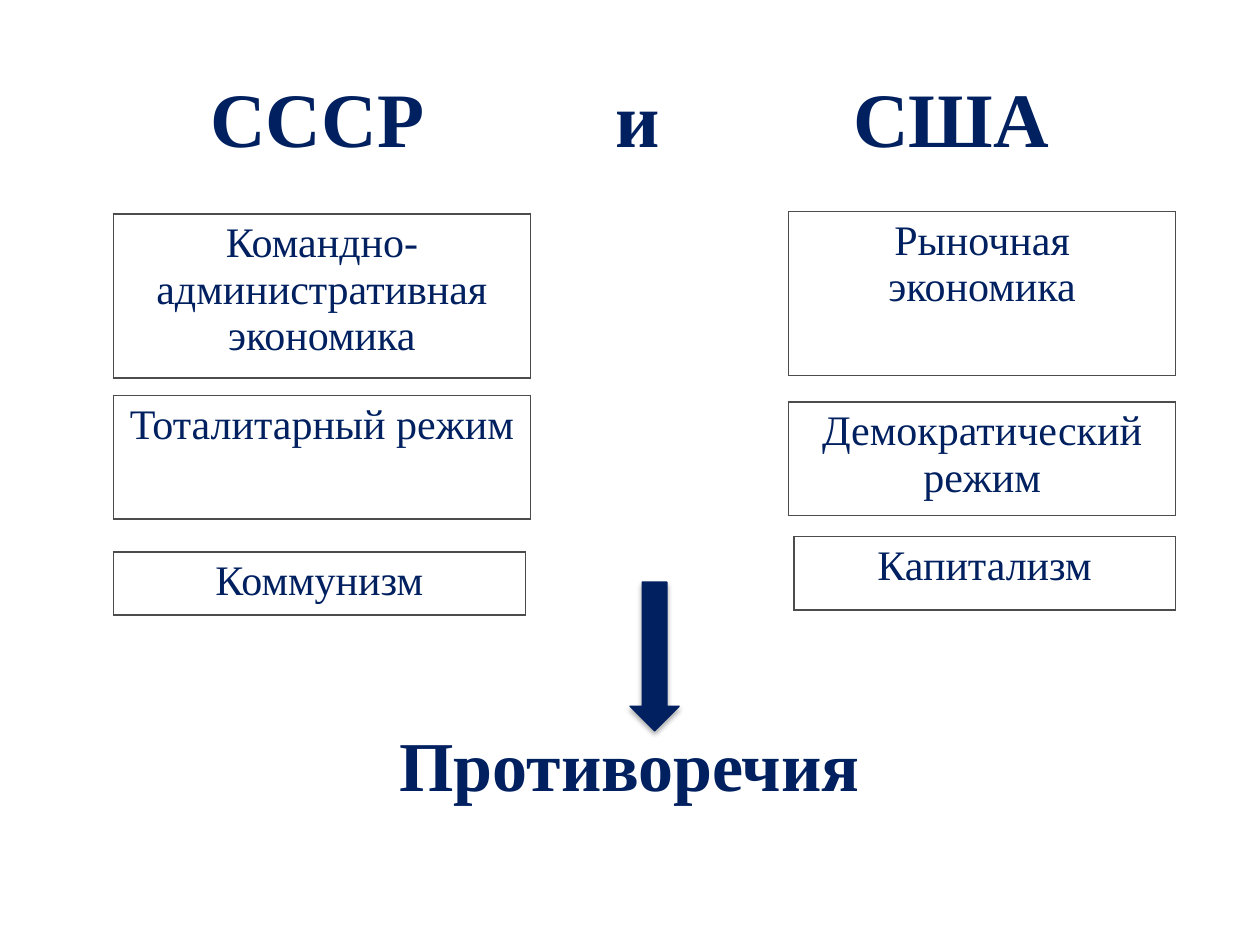
from typing import NamedTuple

from lxml import etree
from pptx import Presentation
from pptx.dml.color import RGBColor
from pptx.enum import shapes, text
from pptx.oxml import ns
from pptx.util import Inches, Pt

NAVY = RGBColor(0x00, 0x20, 0x60)
BORDER = RGBColor(0x4C, 0x4C, 0x4C)
WHITE = RGBColor(0xFF, 0xFF, 0xFF)
FONT = "Times New Roman"


class Box(NamedTuple):
    label: str
    left: float
    top: float
    width: float
    height: float


BOXES = [
    Box("Командно-административная экономика", 0.9, 1.7, 3.31, 1.3),
    Box("Рыночная экономика", 6.26, 1.68, 3.07, 1.3),
    Box("Тоталитарный режим", 0.9, 3.14, 3.31, 0.98),
    Box("Демократический режим", 6.26, 3.19, 3.07, 0.9),
    Box("Коммунизм", 0.9, 4.38, 3.27, 0.5),
    Box("Капитализм", 6.3, 4.26, 3.03, 0.58),
]
TITLE = Box("\tСССР\tи\tСША", 0.5, 0.3, 9, 1.25)
TITLE_CENTRES = (1.92, 4.46, 6.95)
CONCLUSION = Box("Противоречия", 2.28, 5.68, 5.43, 0.77)
ARROW = Box("", 5, 4.62, 0.39, 1.18)


def add_child(parent, tag: str, **attributes):
    return etree.SubElement(parent, ns.qn(tag), attributes)


def place(box: Box) -> tuple:
    return tuple(Inches(value) for value in box[1:])


def write(frame, content: str, *, size: float, bold: bool = False,
          align=text.PP_ALIGN.CENTER, tabs: tuple = ()) -> None:
    paragraph = frame.paragraphs[0]
    paragraph.alignment = align
    if tabs:
        tab_list = add_child(paragraph._p.get_or_add_pPr(), "a:tabLst")
        for position in tabs:
            add_child(tab_list, "a:tab", pos=str(Inches(position)), algn="ctr")
    run = paragraph.add_run()
    run.text = content
    run.font.name = FONT
    run.font.size = Pt(size)
    run.font.bold = bold
    run.font.color.rgb = NAVY


def add_text(slide, box: Box, *, anchor=text.MSO_ANCHOR.TOP, **style) -> None:
    frame = slide.shapes.add_textbox(*place(box)).text_frame
    frame.word_wrap = True
    frame.vertical_anchor = anchor
    write(frame, box.label, **style)


def add_framed_cell(slide, box: Box) -> None:
    table = slide.shapes.add_table(1, 1, *place(box)).table
    table.first_row = False
    table.horz_banding = False
    cell = table.cell(0, 0)
    write(cell.text_frame, box.label, size=24)
    # Borders come before the fill in the cell properties
    properties = cell._tc.get_or_add_tcPr()
    for side in ("a:lnL", "a:lnR", "a:lnT", "a:lnB"):
        line = add_child(properties, side, w=str(Pt(1)))
        add_child(add_child(line, "a:solidFill"), "a:srgbClr", val=str(BORDER))
    cell.fill.background()


def add_arrow(slide, box: Box) -> None:
    arrow = slide.shapes.add_shape(shapes.MSO_SHAPE.DOWN_ARROW, *place(box))
    arrow.fill.solid()
    arrow.fill.fore_color.rgb = NAVY
    arrow.line.color.rgb = NAVY
    arrow.line.width = Pt(0.75)
    # Soft shadow straight below
    arrow.shadow.inherit = False
    effects = arrow._element.spPr.find(ns.qn("a:effectLst"))
    shadow = add_child(effects, "a:outerShdw", blurRad=str(Pt(3.1)),
                       dist=str(Pt(1.8)), dir="5400000", rotWithShape="0")
    add_child(add_child(shadow, "a:srgbClr", val="000000"), "a:alpha", val="35000")


def main() -> None:
    presentation = Presentation()
    presentation.slide_width = Inches(10)
    presentation.slide_height = Inches(7.5)
    slide = presentation.slides.add_slide(presentation.slide_layouts[6])
    slide.background.fill.solid()
    slide.background.fill.fore_color.rgb = WHITE

    # Title: the two sides
    add_text(slide, TITLE, size=44, bold=True, anchor=text.MSO_ANCHOR.MIDDLE,
             align=text.PP_ALIGN.LEFT, tabs=TITLE_CENTRES)

    # Features of each side
    for box in BOXES:
        add_framed_cell(slide, box)

    # Conclusion
    add_arrow(slide, ARROW)
    add_text(slide, CONCLUSION, size=40, bold=True)

    presentation.save("out.pptx")


if __name__ == "__main__":
    main()
